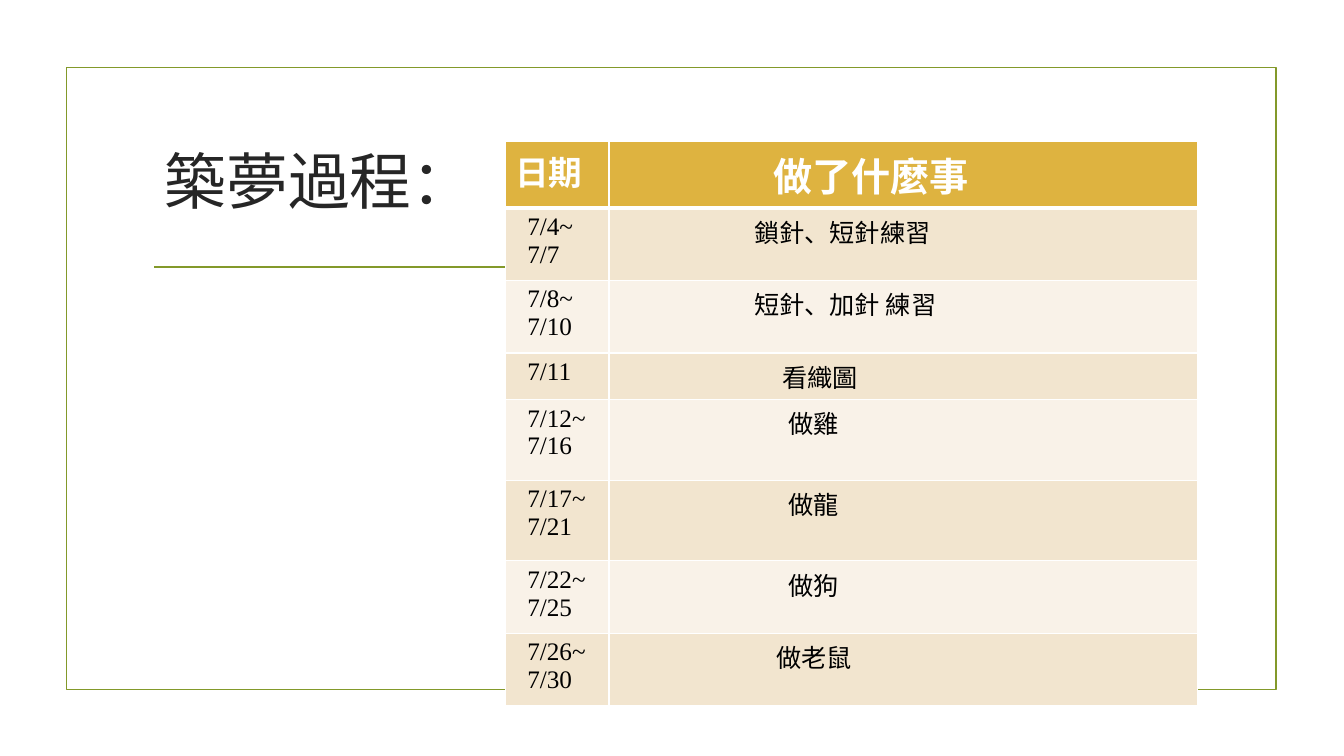
from lxml.etree import SubElement
from pptx import Presentation
from pptx.dml.color import RGBColor
from pptx.enum.shapes import MSO_CONNECTOR, MSO_SHAPE
from pptx.enum.text import MSO_ANCHOR, PP_ALIGN
from pptx.oxml.ns import qn
from pptx.util import Inches, Pt

COLORS = {
    "olive": "83992A",
    "title": "262626",
    "header": "DEB340",
    "band_dark": "F2E5CF",
    "band_light": "F9F2E8",
    "white": "FFFFFF",
    "black": "000000",
}
LATIN = "Times New Roman"
CHINESE = "Noto Sans CJK TC"


def add_run(paragraph, text, size, color, bold=False):
    run = paragraph.add_run()
    run.text = text
    run.font.name = LATIN
    run.font.size = Pt(size)
    run.font.bold = bold
    run.font.color.rgb = RGBColor.from_string(COLORS[color])
    SubElement(run.font._element, qn("a:ea"), typeface=CHINESE)


def add_borders(cell, bottom_width):
    properties = cell._tc.get_or_add_tcPr()
    widths = {"a:lnL": 1, "a:lnR": 1, "a:lnT": 1, "a:lnB": bottom_width}
    for tag, width in widths.items():
        border = SubElement(properties, qn(tag), w=str(Pt(width)))
        fill = SubElement(border, qn("a:solidFill"))
        SubElement(fill, qn("a:srgbClr"), val=COLORS["white"])


prs = Presentation()
prs.slide_width = Inches(13.33)
prs.slide_height = Inches(7.5)
slide = prs.slides.add_slide(prs.slide_layouts[5])
slide.background.fill.solid()
slide.background.fill.fore_color.rgb = RGBColor.from_string(COLORS["white"])

title = slide.shapes.title
title.left, title.top = Inches(1.42), Inches(1.07)
title.width, title.height = Inches(3.49), Inches(1.43)
title.text_frame.word_wrap = True
title.text_frame.vertical_anchor = MSO_ANCHOR.MIDDLE
heading = title.text_frame.paragraphs[0]
heading.alignment = PP_ALIGN.CENTER
add_run(heading, "築夢過程：", 44, "title")

frame = slide.shapes.add_shape(
    MSO_SHAPE.RECTANGLE, Inches(0.66), Inches(0.67), Inches(12), Inches(6.17))
frame.shadow.inherit = False
frame.fill.background()

title_rule = slide.shapes.add_connector(
    MSO_CONNECTOR.STRAIGHT, Inches(1.53), Inches(2.65), Inches(11.81), Inches(2.65))
SubElement(title_rule._element.spPr, qn("a:effectLst"))

for outline in (frame.line, title_rule.line):
    outline.color.rgb = RGBColor.from_string(COLORS["olive"])
    outline.width = Pt(1.25)

schedule = [
    (0.58, ["日期"], "做了什麼事", 1.63),
    (0.72, ["7/4~", "7/7"], "鎖針、短針練習", 1.44),
    (0.72, ["7/8~", "7/10"], "短針、加針 練習", 1.44),
    (0.41, ["7/11"], "看織圖", 1.72),
    (0.8, ["7/12~", "7/16"], "做雞", 1.78),
    (0.8, ["7/17~", "7/21"], "做龍", 1.78),
    (0.72, ["7/22~", "7/25"], "做狗", 1.78),
    (0.72, ["7/26~", "7/30"], "做老鼠", 1.66),
]
timetable = slide.shapes.add_table(
    len(schedule), 2, Inches(5.01), Inches(1.4), Inches(6.87), Inches(5.47)).table
timetable.horz_banding = False
timetable.columns[0].width = Inches(1.03)
timetable.columns[1].width = Inches(5.84)

for row, (height, dates, activity, indent) in enumerate(schedule):
    timetable.rows[row].height = Inches(height)
    is_header = row == 0
    band = "header" if is_header else ("band_light", "band_dark")[row % 2]
    sizes = (24, 28) if is_header else (18, 18)
    date_indent = 0.1 if is_header else 0.22
    contents = [(dates, date_indent), ([activity], indent)]
    for column, (lines, margin) in enumerate(contents):
        cell = timetable.cell(row, column)
        cell.margin_left = Inches(margin)
        cell.margin_right = Inches(0.05)
        add_borders(cell, 3 if is_header else 1)
        cell.fill.solid()
        cell.fill.fore_color.rgb = RGBColor.from_string(COLORS[band])
        for index, line in enumerate(lines):
            text = cell.text_frame
            paragraph = text.add_paragraph() if index else text.paragraphs[0]
            add_run(paragraph, line, sizes[column],
                    "white" if is_header else "black", is_header)

prs.save("out.pptx")
